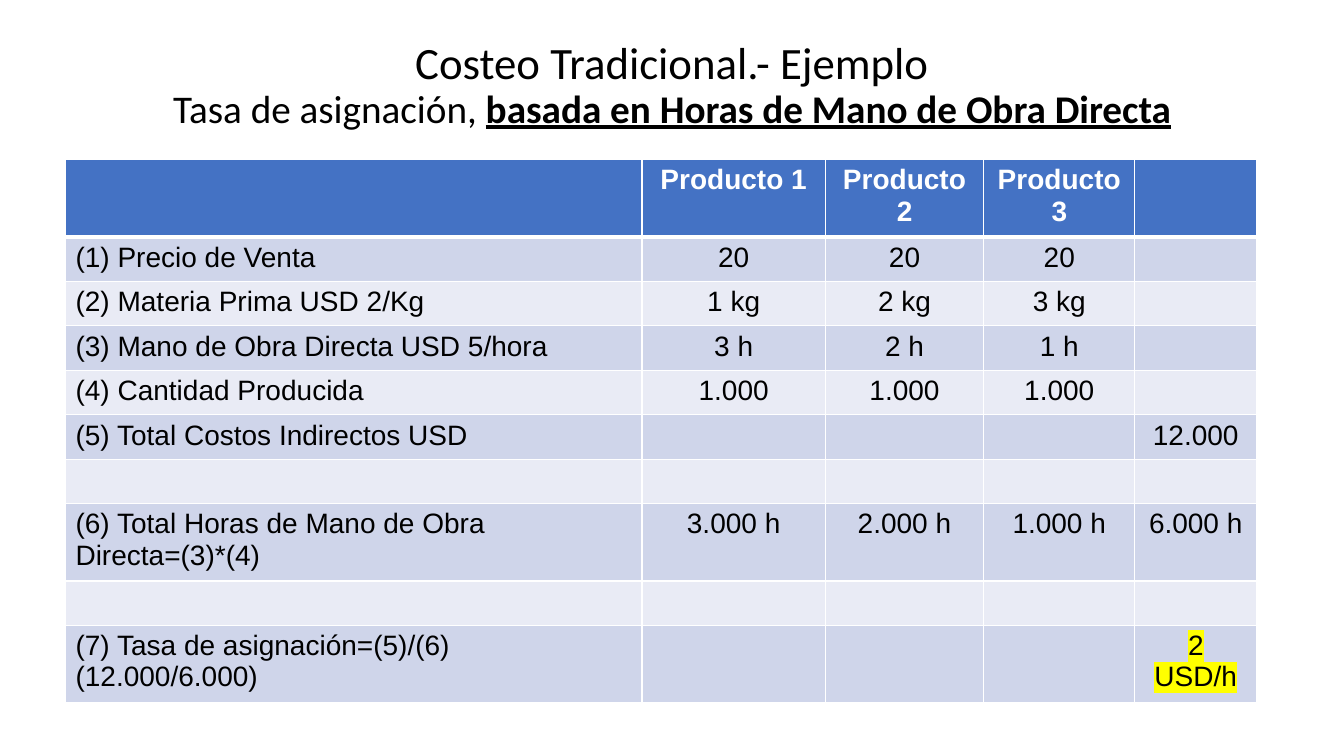
from lxml.etree import SubElement
from pptx import Presentation
from pptx.dml.color import RGBColor
from pptx.enum.text import MSO_ANCHOR, PP_ALIGN
from pptx.oxml import parse_xml
from pptx.oxml.ns import nsdecls, qn
from pptx.util import Cm, Pt

BLACK, WHITE, BLUE, YELLOW = "000000", "FFFFFF", "4472C4", "FFFF00"
BANDS = ["CFD5EA", "E9EBF5"]
COL_WIDTHS = [14.53, 4.62, 3.99, 3.81, 3.07]
ROW_HEIGHT, TALL_ROW_HEIGHT = 1.12, 1.83
TALL_ROWS = {0, 7, 9}
ROWS = [
    ["", "Producto 1", "Producto 2", "Producto 3", ""],
    ["(1) Precio de Venta", "20", "20", "20", ""],
    ["(2) Materia Prima USD 2/Kg", "1 kg", "2 kg", "3 kg", ""],
    ["(3) Mano de Obra Directa USD 5/hora", "3 h", "2 h", "1 h", ""],
    ["(4) Cantidad Producida", "1.000", "1.000", "1.000", ""],
    ["(5) Total Costos Indirectos USD", "", "", "", "12.000"],
    [""] * 5,
    ["(6) Total Horas de Mano de Obra Directa=(3)*(4)",
     "3.000 h", "2.000 h", "1.000 h", "6.000 h"],
    [""] * 5,
    ["(7) Tasa de asignación=(5)/(6) (12.000/6.000)", "", "", "", "2 USD/h"],
]


def rgb(color):
    """Turn a hex string into a colour."""
    return RGBColor.from_string(color)


def add_run(p, text, color, **font):
    """Add a run with the given font attributes."""
    r = p.add_run()
    r.text = text
    for name, value in font.items():
        setattr(r.font, name, value)
    r.font.color.rgb = rgb(color)
    return r


def highlight(r, color):
    """Put a marker colour behind a run."""
    fill = r.font._element.find(qn("a:solidFill"))
    fill.addnext(parse_xml(
        f'<a:highlight {nsdecls("a")}><a:srgbClr val="{color}"/></a:highlight>'))


def set_borders(cell, widths):
    """Draw white cell borders with the given widths in points."""
    tc_pr = cell._tc.get_or_add_tcPr()
    for side, width in widths.items():
        ln = SubElement(tc_pr, qn(f"a:ln{side}"), w=str(Pt(width)))
        fill = SubElement(ln, qn("a:solidFill"))
        SubElement(fill, qn("a:srgbClr"), val=WHITE)


def add_title(s, left, top, width, height):
    """Add the two-line centred title."""
    tf = s.shapes.add_textbox(Cm(left), Cm(top), Cm(width), Cm(height)).text_frame
    tf.word_wrap = True
    tf.vertical_anchor = MSO_ANCHOR.MIDDLE
    p = tf.paragraphs[0]
    p.alignment = PP_ALIGN.CENTER
    p.line_spacing = 0.9
    add_run(p, "Costeo Tradicional.- Ejemplo", BLACK, name="Calibri", size=Pt(32))
    p.add_line_break()
    subtitle = {"name": "Calibri", "size": Pt(28)}
    add_run(p, "Tasa de asignación, ", BLACK, **subtitle)
    add_run(p, "basada en Horas de Mano de Obra Directa", BLACK,
            bold=True, underline=True, **subtitle)


def add_cost_table(s, left, top):
    """Add the table that leads to the allocation rate."""
    heights = [TALL_ROW_HEIGHT if i in TALL_ROWS else ROW_HEIGHT
               for i in range(len(ROWS))]
    table = s.shapes.add_table(len(ROWS), len(COL_WIDTHS), Cm(left), Cm(top),
                               Cm(sum(COL_WIDTHS)), Cm(sum(heights))).table
    for column, width in zip(table.columns, COL_WIDTHS):
        column.width = Cm(width)
    for i, (row, height) in enumerate(zip(ROWS, heights)):
        table.rows[i].height = Cm(height)
        header = i == 0
        borders = {"L": 1, "R": 1, "T": 3 if i == 1 else 1, "B": 3 if header else 1}
        for j, text in enumerate(row):
            cell = table.cell(i, j)
            set_borders(cell, borders)
            cell.fill.solid()
            cell.fill.fore_color.rgb = rgb(BLUE if header else BANDS[(i - 1) % 2])
            if not text:
                continue
            p = cell.text_frame.paragraphs[0]
            p.alignment = PP_ALIGN.CENTER if j else PP_ALIGN.LEFT
            r = add_run(p, text, WHITE if header else BLACK,
                        name="Arial", size=Pt(20), bold=header)
            if text == "2 USD/h":
                highlight(r, YELLOW)


def main():
    """Build the slide and save it."""
    prs = Presentation()
    prs.slide_width, prs.slide_height = Cm(33.87), Cm(19.05)
    s = prs.slides.add_slide(prs.slide_layouts[6])
    add_title(s, 2.33, 0.33, 29.21, 3.68)
    add_cost_table(s, 1.65, 4.02)
    prs.save("out.pptx")


if __name__ == "__main__":
    main()
